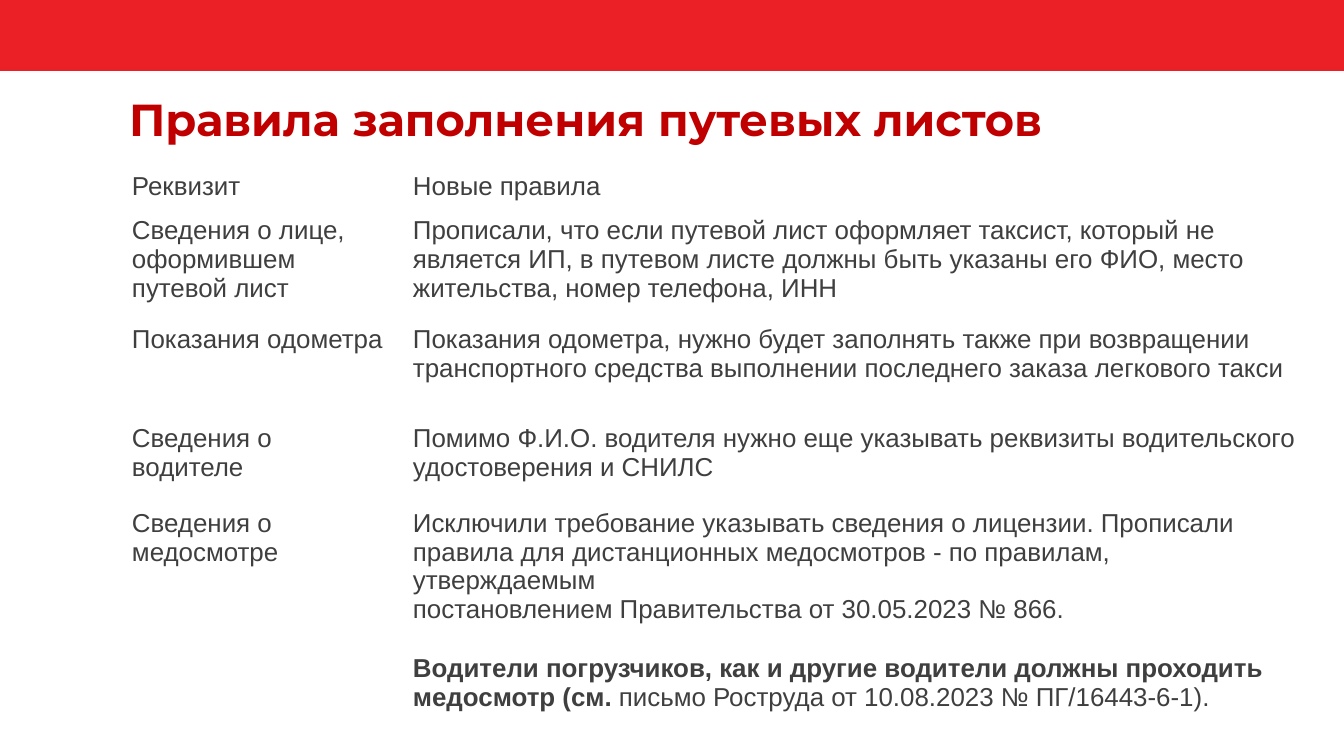
import pptx
import pptx.util
import pptx.dml.color
import pptx.enum.shapes
import pptx.enum.text

RED = pptx.dml.color.RGBColor(0xEB, 0x20, 0x27)
DARK = pptx.dml.color.RGBColor(0xC0, 0x00, 0x00)
GREY = pptx.dml.color.RGBColor(0x3F, 0x3F, 0x3F)
PX = 914400 / 100.8


def px(n):
    return pptx.util.Emu(round(n * PX))


def write(para, text, size=18.5, face="Arial", color=GREY, bold=False):
    run = para.add_run()
    run.text = text
    run.font.size = pptx.util.Pt(size)
    run.font.name = face
    run.font.color.rgb = color
    run.font.bold = bold


deck = pptx.Presentation()
deck.slide_width, deck.slide_height = px(1344), px(756)
slide = deck.slides.add_slide(deck.slide_layouts[5])

# Top band
band = slide.shapes.add_shape(
    pptx.enum.shapes.MSO_SHAPE.RECTANGLE, px(0), px(0), px(1344), px(71))
band.shadow.inherit = False
band.fill.solid()
band.fill.fore_color.rgb = RED
band.line.fill.background()

# Title
title = slide.shapes.title
title.left, title.top, title.width, title.height = px(119), px(93), px(1202), px(146)
frame = title.text_frame
frame.word_wrap = True
frame.auto_size = pptx.enum.text.MSO_AUTO_SIZE.NONE
frame.vertical_anchor = pptx.enum.text.MSO_ANCHOR.TOP
head = frame.paragraphs[0]
head.alignment = pptx.enum.text.PP_ALIGN.LEFT
head.line_spacing = 0.9
write(head, "Правила заполнения путевых листов", size=32,
      face="Montserrat", color=DARK, bold=True)

# Table of rules: row height, item, new rule
ROWS = [
    (44, "Реквизит", "Новые правила"),
    (109, "Сведения о лице, оформившем путевой лист",
     "Прописали, что если путевой лист оформляет таксист, который не является ИП, "
     "в путевом листе должны быть указаны его ФИО, место жительства, номер телефона, ИНН"),
    (99, "Показания одометра",
     "Показания одометра, нужно будет заполнять также при возвращении "
     "транспортного средства выполнении последнего заказа легкового такси"),
    (85, "Сведения о водителе",
     "Помимо Ф.И.О. водителя нужно еще указывать реквизиты "
     "водительского удостоверения и СНИЛС"),
    (263, "Сведения о медосмотре",
     "Исключили требование указывать сведения о лицензии. Прописали правила "
     "для дистанционных медосмотров - по правилам, утверждаемым \v"
     "постановлением Правительства от 30.05.2023 № 866."),
]
COLS = [281, 911]
high = sum(row[0] for row in ROWS)
table = slide.shapes.add_table(
    len(ROWS), len(COLS), px(119), px(166), px(sum(COLS)), px(high)).table
table.horz_banding = False
for col, wide in zip(table.columns, COLS):
    col.width = px(wide)
for r, (tall, *texts) in enumerate(ROWS):
    table.rows[r].height = px(tall)
    for c, text in enumerate(texts):
        cell = table.cell(r, c)
        cell.fill.background()
        cell.margin_left = cell.margin_right = px(13)
        cell.margin_top = cell.margin_bottom = px(6)
        para = cell.text_frame.paragraphs[0]
        for i, part in enumerate(text.split("\v")):
            if i:
                para.add_line_break()
            write(para, part)

# Closing note in the last cell
note = table.cell(len(ROWS) - 1, 1).text_frame.add_paragraph()
note.space_before = pptx.util.Pt(21)
write(note, "Водители погрузчиков, как и другие водители должны проходить "
      "медосмотр (см. ", bold=True)
write(note, "письмо Роструда от 10.08.2023 № ПГ/16443-6-1).")

deck.save("out.pptx")
